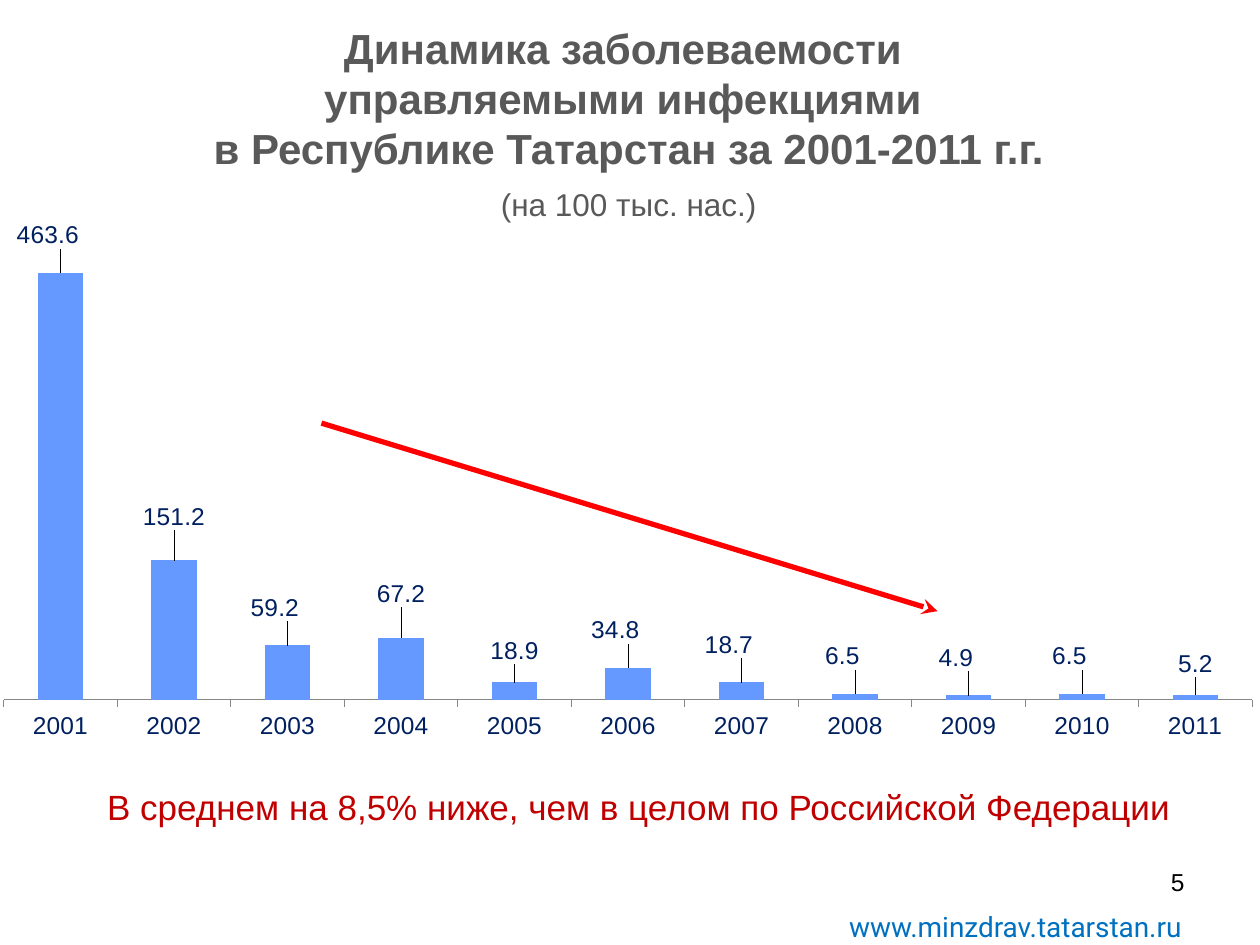
"""Build a slide charting the fall of vaccine-preventable infections in Tatarstan."""
from dataclasses import dataclass, field

import lxml.etree
import pptx
import pptx.chart.data
import pptx.dml.color
import pptx.enum.chart
import pptx.enum.shapes
import pptx.enum.text
import pptx.oxml
import pptx.oxml.ns
import pptx.util

Cm = pptx.util.Cm
Pt = pptx.util.Pt
Align = pptx.enum.text.PP_ALIGN


@dataclass(frozen=True)
class Theme:
    face: str = "Arial"
    web: str = "Roboto"
    gray: str = "595959"
    navy: str = "002060"
    bar: str = "6699FF"
    axis: str = "878787"
    red: str = "FF0000"
    note: str = "C00000"
    link: str = "0070C0"
    black: str = "000000"
    head: int = 24
    body: int = 20
    sub: int = 18
    url: int = 16
    label: int = 14


@dataclass(frozen=True)
class Line:
    text: str
    size: int
    color: str
    face: str = Theme.face
    bold: bool = False
    para: dict = field(default_factory=dict)


@dataclass(frozen=True)
class Box:
    area: tuple[float, float, float, float]
    lines: list[Line]
    wrap: bool = True


@dataclass(frozen=True)
class Bar:
    year: str
    value: float
    dx: float
    dy: float


T = Theme()

BARS = [
    Bar("2001", 463.6, -0.01, -0.03),
    Bar("2002", 151.2, 0, -0.04),
    Bar("2003", 59.2, -0.01, -0.03),
    Bar("2004", 67.2, 0, -0.04),
    Bar("2005", 18.9, 0, -0.02),
    Bar("2006", 34.8, -0.01, -0.03),
    Bar("2007", 18.7, -0.01, -0.03),
    Bar("2008", 6.5, -0.01, -0.03),
    Bar("2009", 4.9, -0.01, -0.03),
    Bar("2010", 6.5, -0.01, -0.03),
    Bar("2011", 5.2, 0, -0.02),
]

BOXES = [
    Box((16.87, 18.21, 7.49, 0.94), [Line("www.minzdrav.tatarstan.ru", T.url, T.link, T.web)], False),
    Box((18.21, 17.35, 5.92, 1.32), [Line("5", T.label, T.black, para={"alignment": Align.RIGHT})]),
    Box((0.61, 0.33, 24.13, 4.2), [
        Line("Динамика заболеваемости \vуправляемыми инфекциями \v"
             "в Республике Татарстан за 2001-2011 г.г.", T.head, T.gray, bold=True,
             para={"alignment": Align.CENTER, "line_spacing": Pt(28.6)}),
        Line("(на 100 тыс. нас.)", T.sub, T.gray,
             para={"alignment": Align.CENTER, "space_before": Pt(7)}),
    ]),
    Box((1.91, 15.72, 22.28, 1.12),
        [Line("В среднем на 8,5% ниже, чем в целом по Российской Федерации", T.body, T.note)], False),
]


def rgb(code: str) -> pptx.dml.color.RGBColor:
    """Turn a hex code into a colour."""
    return pptx.dml.color.RGBColor.from_string(code)


def put(item, vals: dict) -> None:
    """Set each named value on the item."""
    for name, val in vals.items():
        setattr(item, name, val)


def ink(font, size: int, color: str, face: str = T.face, bold: bool = False) -> None:
    """Style a font."""
    put(font, {"size": Pt(size), "name": face, "bold": bold})
    font.color.rgb = rgb(color)


def write(slide, box: Box) -> None:
    """Add a text box with its lines."""
    frame = slide.shapes.add_textbox(*map(Cm, box.area)).text_frame
    frame.word_wrap = box.wrap
    for i, line in enumerate(box.lines):
        para = frame.add_paragraph() if i else frame.paragraphs[0]
        para.text = line.text
        put(para, line.para)
        for run in para.runs:
            ink(run.font, line.size, line.color, line.face, line.bold)


def layout(vals: dict):
    """Make a manual chart layout from named values."""
    body = "".join(f'<c:{name} val="{val}"/>' for name, val in vals.items())
    return pptx.oxml.parse_xml(
        f'<c:layout {pptx.oxml.ns.nsdecls("c")}><c:manualLayout>{body}</c:manualLayout></c:layout>')


def plot(slide, bars: list[Bar]) -> None:
    """Add the column chart with shifted value labels."""
    kinds = pptx.enum.chart
    data = pptx.chart.data.CategoryChartData(number_format="0.0")
    data.categories = [bar.year for bar in bars]
    data.add_series("Series 1", [bar.value for bar in bars])
    chart = slide.shapes.add_chart(
        kinds.XL_CHART_TYPE.COLUMN_CLUSTERED, Cm(0), Cm(4.47), Cm(25.4), Cm(12.62), data).chart
    put(chart, {"has_legend": False, "has_title": False})
    ink(chart.font, T.sub, T.black)
    put(chart.value_axis, {"visible": False, "has_major_gridlines": False,
                           "minimum_scale": 0, "maximum_scale": 500})
    axis = chart.category_axis
    put(axis, {"tick_label_position": kinds.XL_TICK_LABEL_POSITION.LOW,
               "major_tick_mark": kinds.XL_TICK_MARK.OUTSIDE})
    ink(axis.tick_labels.font, T.label, T.navy)
    axis.format.line.color.rgb = rgb(T.axis)
    axis.format.line.width = Pt(0.75)

    cols = chart.plots[0]
    put(cols, {"gap_width": 150, "vary_by_categories": False})
    row = cols.series[0]
    row.format.fill.solid()
    row.format.fill.fore_color.rgb = rgb(T.bar)
    place = kinds.XL_LABEL_POSITION.OUTSIDE_END
    put(row.data_labels, {"show_value": True, "position": place,
                          "number_format": "0.0", "number_format_is_linked": False})
    ink(row.data_labels.font, T.label, T.navy)
    for i, bar in enumerate(bars):
        label = row.points[i].data_label
        ink(label.font, T.label, T.navy)
        label.position = place
    marks = row.data_labels._element.findall(pptx.oxml.ns.qn("c:dLbl"))
    for bar, mark in zip(bars, marks):
        mark.insert(1, layout({"x": bar.dx, "y": bar.dy}))

    area = chart._chartSpace.chart.plotArea
    for old in area.findall(pptx.oxml.ns.qn("c:layout")):
        area.remove(old)
    area.insert(0, layout({"layoutTarget": "inner", "xMode": "edge", "yMode": "edge",
                           "x": 0.003, "y": 0.022, "w": 0.991, "h": 0.74}))


def arrow(slide, ends: tuple[float, float, float, float]) -> None:
    """Add the red trend arrow."""
    link = slide.shapes.add_connector(pptx.enum.shapes.MSO_CONNECTOR.STRAIGHT, *map(Cm, ends))
    link.line.color.rgb = rgb(T.red)
    link.line.width = Pt(3)
    qn = pptx.oxml.ns.qn
    lxml.etree.SubElement(link.line._get_or_add_ln(), qn("a:tailEnd"), type="stealth")
    lxml.etree.SubElement(link._element.spPr, qn("a:effectLst"))


def main() -> None:
    """Build and save the slide."""
    deck = pptx.Presentation()
    put(deck, {"slide_width": Cm(25.4), "slide_height": Cm(19.05)})
    slide = deck.slides.add_slide(deck.slide_layouts[6])
    plot(slide, BARS)
    for box in BOXES:
        write(slide, box)
    arrow(slide, (6.48, 8.53, 18.9, 12.32))
    deck.save("out.pptx")


if __name__ == "__main__":
    main()
